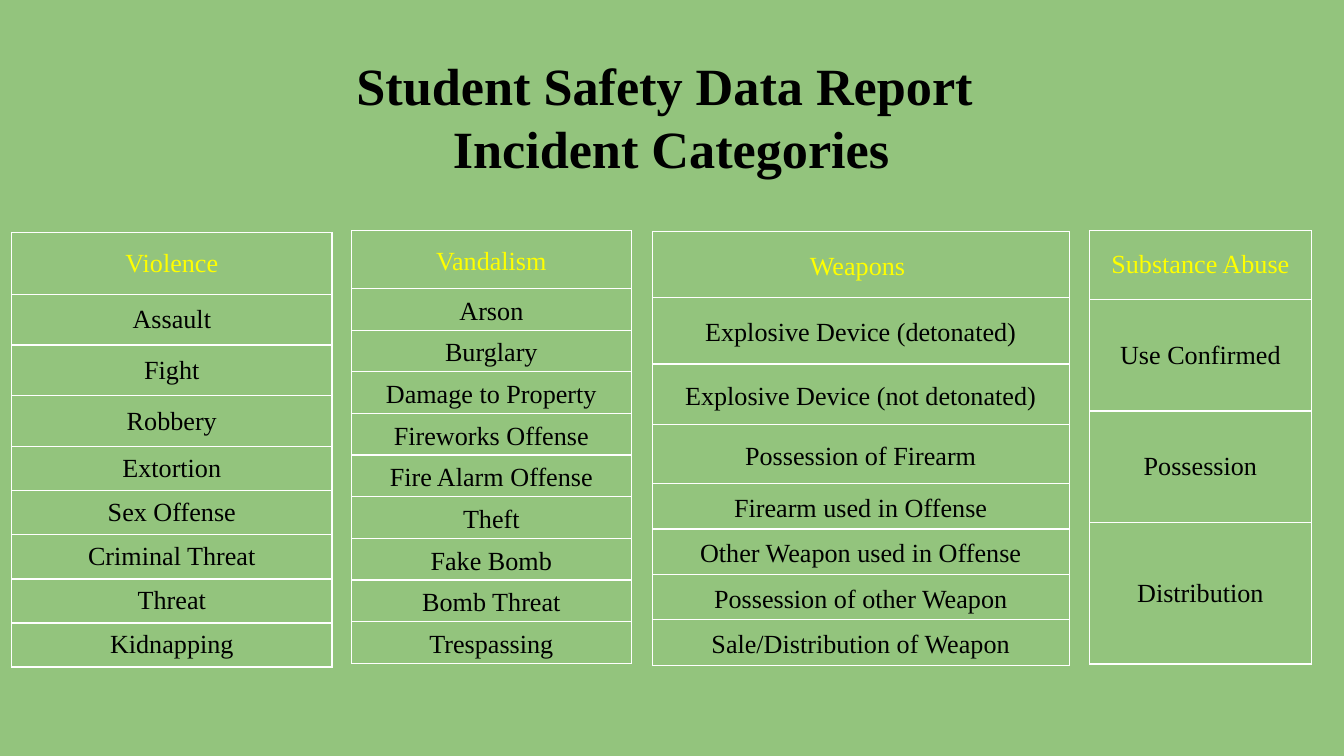
from lxml.etree import SubElement as Sub
from pptx import Presentation
from pptx.dml.color import RGBColor as RGB
from pptx.enum.text import MSO_ANCHOR as Anchor, PP_ALIGN as Align
from pptx.oxml.ns import qn
from pptx.util import Inches, Pt

INK = {"page": "93C47D", "head": "FFFF00", "text": "000000", "line": "FFFFFF"}
FONT = "Times New Roman"

# Widescreen page, 16 by 9
deck = Presentation()
deck.slide_width = Inches(10)
deck.slide_height = deck.slide_width * 9 // 16
slide = deck.slides.add_slide(deck.slide_layouts[6])
slide.background.fill.solid()
slide.background.fill.fore_color.rgb = RGB.from_string(INK["page"])

# Square grid: 100 columns across the slide
UNIT = deck.slide_width / 100


def grid(*counts):
    return [round(n * UNIT) for n in counts]


def write(para, text, size, color, bold=False):
    para.alignment = Align.CENTER
    run = para.add_run()
    run.text = text
    run.font.name, run.font.size, run.font.bold = FONT, Pt(size), bold
    run.font.color.rgb = RGB.from_string(INK[color])


# Title
frame = slide.shapes.add_textbox(*grid(19.63, 2.95, 60.6, 10.5)).text_frame
frame.word_wrap = True
frame.margin_left, frame.margin_top, frame.margin_right, frame.margin_bottom = grid(1, 1, 1, 1)
write(frame.paragraphs[0], "Student Safety Data Report ", 28, "text", True)
write(frame.add_paragraph(), "Incident Categories", 28, "text", True)

# Category tables: left, top, column widths, row heights, line spacing, header inset, words
TABLES = [
    (26.15, 17.17, [20.83], [4.3] + [3.1] * 9, 1.15, (0.3, 0.2),
     ["Vandalism", "Arson", "Burglary", "Damage to Property", "Fireworks Offense",
      "Fire Alarm Offense", "Theft", "Fake Bomb", "Bomb Threat", "Trespassing"]),
    (48.54, 17.24, [31.02], [4.9, 4.95, 4.5, 4.4] + [3.38] * 4, 1.15, (0.3, 0.2),
     ["Weapons ", "Explosive Device (detonated)", "Explosive Device (not detonated)",
      "Possession of Firearm", "Firearm used in Offense", "Other Weapon used in Offense",
      "Possession of other Weapon", "Sale/Distribution of Weapon"]),
    (81.07, 17.17, [16.5], [5.1, 8.32, 8.32, 10.5], 1, (0.3, 0.2),
     ["Substance Abuse", "Use Confirmed", "Possession", "Distribution"]),
    (0.87, 17.3, [15.24, 8.6], [4.6] + [3.78] * 3 + [3.28] * 5, 1, (1, 1),
     ["Violence", "Assault", "Fight", "Robbery", "Extortion", "Sex Offense",
      "Criminal Threat", "Threat", "Kidnapping"]),
]

for left, top, cols, rows, lead, inset, words in TABLES:
    place = grid(left, top, sum(cols), sum(rows))
    table = slide.shapes.add_table(len(rows), len(cols), *place).table
    table.first_row = table.horz_banding = False
    for col, width in zip(table.columns, grid(*cols)):
        col.width = width
    for row, height in zip(table.rows, grid(*rows)):
        row.height = height

    # Borders and clear fill
    for cell in table.iter_cells():
        props = cell._tc.get_or_add_tcPr()
        for side in ("lnL", "lnR", "lnT", "lnB"):
            line = Sub(props, qn(f"a:{side}"), w=str(Pt(0.75)))
            Sub(Sub(line, qn("a:solidFill")), qn("a:srgbClr"), val=INK["line"])
        cell.fill.background()

    # Words, with each row spanning all columns
    for r, word in enumerate(words):
        cell = table.cell(r, 0)
        if len(cols) > 1:
            cell.merge(table.cell(r, len(cols) - 1))
        side, edge = grid(*(inset if r == 0 else (0.3, 0.2)))
        cell.margin_left = cell.margin_right = side
        cell.margin_top = cell.margin_bottom = edge
        cell.vertical_anchor = Anchor.MIDDLE
        para = cell.text_frame.paragraphs[0]
        para.line_spacing = float(lead)
        write(para, word, 14, "text" if r else "head")

deck.save("out.pptx")
